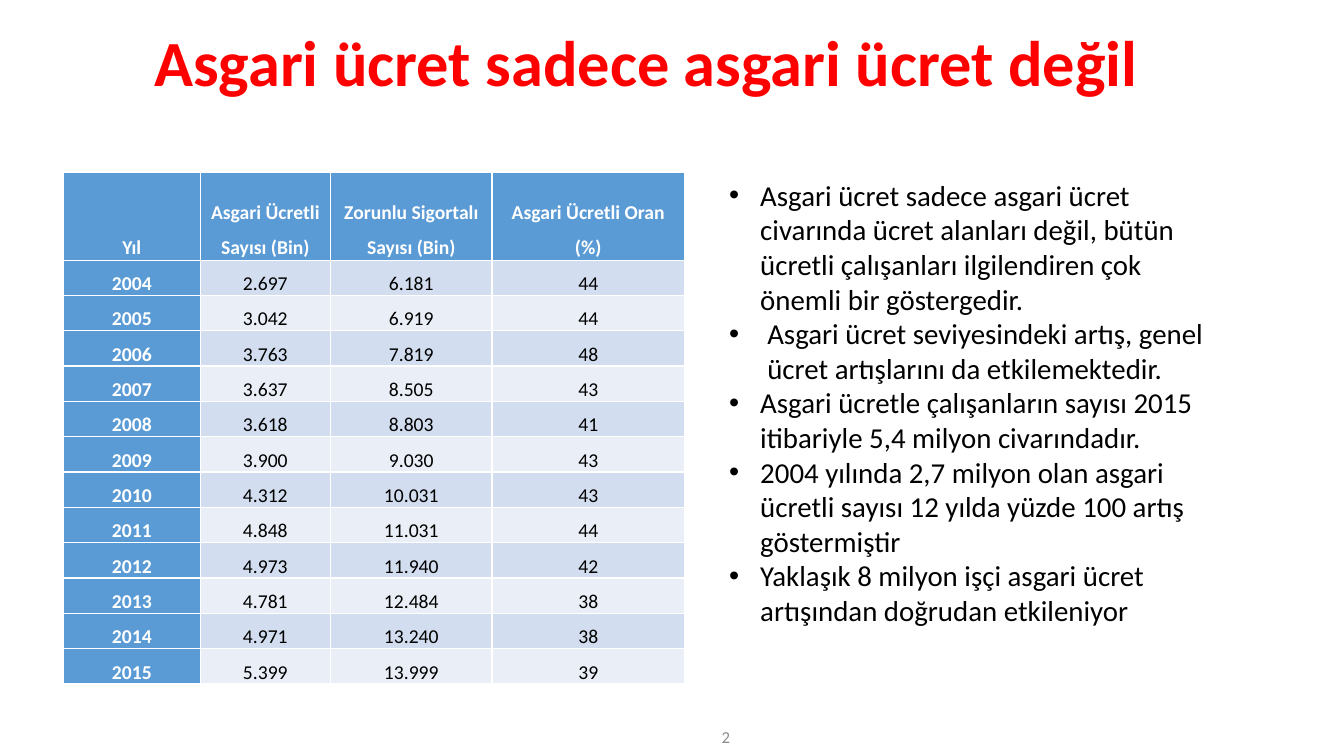
import pptx
import pptx.util
import pptx.dml.color
import pptx.enum.text

COLOURS = {
    "title": "FF0000",
    "header": "5B9BD5",
    "odd_band": "D2DEEF",
    "even_band": "EAEFF7",
    "light": "FFFFFF",
    "dark": "000000",
    "number": "8C8C8C",
}
FONT = "Calibri"
SLIDE_WIDTH = pptx.util.Inches(13.33)
SLIDE_HEIGHT = pptx.util.Inches(7.5)

TITLE = "Asgari ücret sadece asgari ücret değil"
HEADINGS = ["Yıl", "Asgari Ücretli Sayısı (Bin)", "Zorunlu Sigortalı Sayısı (Bin)",
            "Asgari Ücretli Oran\v(%)"]
WAGE_ROWS = [
    ("2004", "2.697", "6.181", "44"),
    ("2005", "3.042", "6.919", "44"),
    ("2006", "3.763", "7.819", "48"),
    ("2007", "3.637", "8.505", "43"),
    ("2008", "3.618", "8.803", "41"),
    ("2009", "3.900", "9.030", "43"),
    ("2010", "4.312", "10.031", "43"),
    ("2011", "4.848", "11.031", "44"),
    ("2012", "4.973", "11.940", "42"),
    ("2013", "4.781", "12.484", "38"),
    ("2014", "4.971", "13.240", "38"),
    ("2015", "5.399", "13.999", "39"),
]
COLUMN_SHARES = [0.22, 0.21, 0.26, 0.31]
HEADER_SHARE = 0.18
FINDINGS = [
    ("Asgari ücret sadece asgari ücret civarında ücret alanları değil, bütün ücretli "
     "çalışanları ilgilendiren çok önemli bir göstergedir.", 0.31),
    ("Asgari ücret seviyesindeki artış, genel ücret artışlarını da etkilemektedir.", 0.38),
    ("Asgari ücretle çalışanların sayısı 2015 itibariyle 5,4 milyon civarındadır.", 0.31),
    ("2004 yılında 2,7 milyon olan asgari ücretli sayısı 12 yılda yüzde 100 artış "
     "göstermiştir", 0.31),
    ("Yaklaşık 8 milyon işçi asgari ücret artışından doğrudan etkileniyor", 0.31),
]


def percent_box(left, top, width, height):
    """Turn percentages of the slide into a left, top, width, height box."""
    return (int(SLIDE_WIDTH * left / 100), int(SLIDE_HEIGHT * top / 100),
            int(SLIDE_WIDTH * width / 100), int(SLIDE_HEIGHT * height / 100))


def place(placeholder, box):
    """Move a placeholder into the given box."""
    placeholder.left, placeholder.top, placeholder.width, placeholder.height = box


def format_runs(paragraph, size, colour, bold=False):
    """Give every run of a paragraph its font."""
    for run in paragraph.runs:
        run.font.name = FONT
        run.font.size = pptx.util.Pt(size)
        run.font.bold = bold
        run.font.color.rgb = pptx.dml.color.RGBColor.from_string(COLOURS[colour])


def add_title(slide, box):
    """Write the red headline in the title placeholder."""
    headline = slide.shapes.title
    place(headline, box)
    frame = headline.text_frame
    frame.text = TITLE
    frame.auto_size = pptx.enum.text.MSO_AUTO_SIZE.NONE
    frame.vertical_anchor = pptx.enum.text.MSO_ANCHOR.MIDDLE
    frame.paragraphs[0].alignment = pptx.enum.text.PP_ALIGN.LEFT
    frame.paragraphs[0].line_spacing = 0.9
    format_runs(frame.paragraphs[0], 46, "title", True)


def fill_cell(cell, text, fill, is_heading):
    """Write one table cell on its band colour."""
    cell.text = text
    cell.vertical_anchor = pptx.enum.text.MSO_ANCHOR.BOTTOM
    cell.margin_left = cell.margin_right = pptx.util.Inches(0.02)
    cell.margin_top = cell.margin_bottom = 0
    cell.fill.solid()
    cell.fill.fore_color.rgb = pptx.dml.color.RGBColor.from_string(COLOURS[fill])
    paragraph = cell.text_frame.paragraphs[0]
    paragraph.alignment = pptx.enum.text.PP_ALIGN.CENTER
    paragraph.line_spacing = 1.5
    format_runs(paragraph, 14, "light" if is_heading else "dark", is_heading)


def add_wage_table(slide, box):
    """Draw the yearly table of minimum-wage earners."""
    records = [HEADINGS, *WAGE_ROWS]
    width, height = box[2:]
    table = slide.shapes.add_table(len(records), len(HEADINGS), *box).table
    table.first_col = True
    for column, share in zip(table.columns, COLUMN_SHARES):
        column.width = int(width * share)
    for index, row in enumerate(table.rows):
        share = (1 - HEADER_SHARE) / len(WAGE_ROWS) if index else HEADER_SHARE
        row.height = int(height * share)
    for row_index, record in enumerate(records):
        band = "odd_band" if row_index % 2 else "even_band"
        for column_index, text in enumerate(record):
            is_heading = row_index == 0 or column_index == 0
            fill_cell(table.cell(row_index, column_index), text,
                      "header" if is_heading else band, is_heading)


def add_findings(slide, box):
    """List the findings in the body placeholder."""
    findings = slide.placeholders[1]
    place(findings, box)
    frame = findings.text_frame
    frame.text = "\n".join(text for text, _ in FINDINGS)
    frame.auto_size = pptx.enum.text.MSO_AUTO_SIZE.SHAPE_TO_FIT_TEXT
    for paragraph, (_, indent) in zip(frame.paragraphs, FINDINGS):
        properties = paragraph._p.get_or_add_pPr()
        properties.set("marL", str(pptx.util.Inches(indent)))
        properties.set("indent", str(-pptx.util.Inches(indent)))
        paragraph.space_before = pptx.util.Pt(0)
        format_runs(paragraph, 20.6, "dark")


def add_page_number(slide, box):
    """Write the page number at the foot of the slide."""
    frame = slide.shapes.add_textbox(*box).text_frame
    frame.word_wrap = True
    frame.vertical_anchor = pptx.enum.text.MSO_ANCHOR.MIDDLE
    frame.text = "2"
    frame.paragraphs[0].alignment = pptx.enum.text.PP_ALIGN.RIGHT
    format_runs(frame.paragraphs[0], 12, "number")


def main():
    """Build the slide and save it."""
    presentation = pptx.Presentation()
    presentation.slide_width = SLIDE_WIDTH
    presentation.slide_height = SLIDE_HEIGHT
    slide = presentation.slides.add_slide(presentation.slide_layouts[1])
    add_title(slide, percent_box(10.73, 1.87, 83.12, 13.6))
    add_wage_table(slide, percent_box(4.73, 22.8, 46.21, 64.5))
    add_findings(slide, percent_box(53.49, 22.8, 37.21, 69.2))
    add_page_number(slide, percent_box(32.56, 94.8, 22.5, 5.33))
    presentation.save("out.pptx")


if __name__ == "__main__":
    main()
